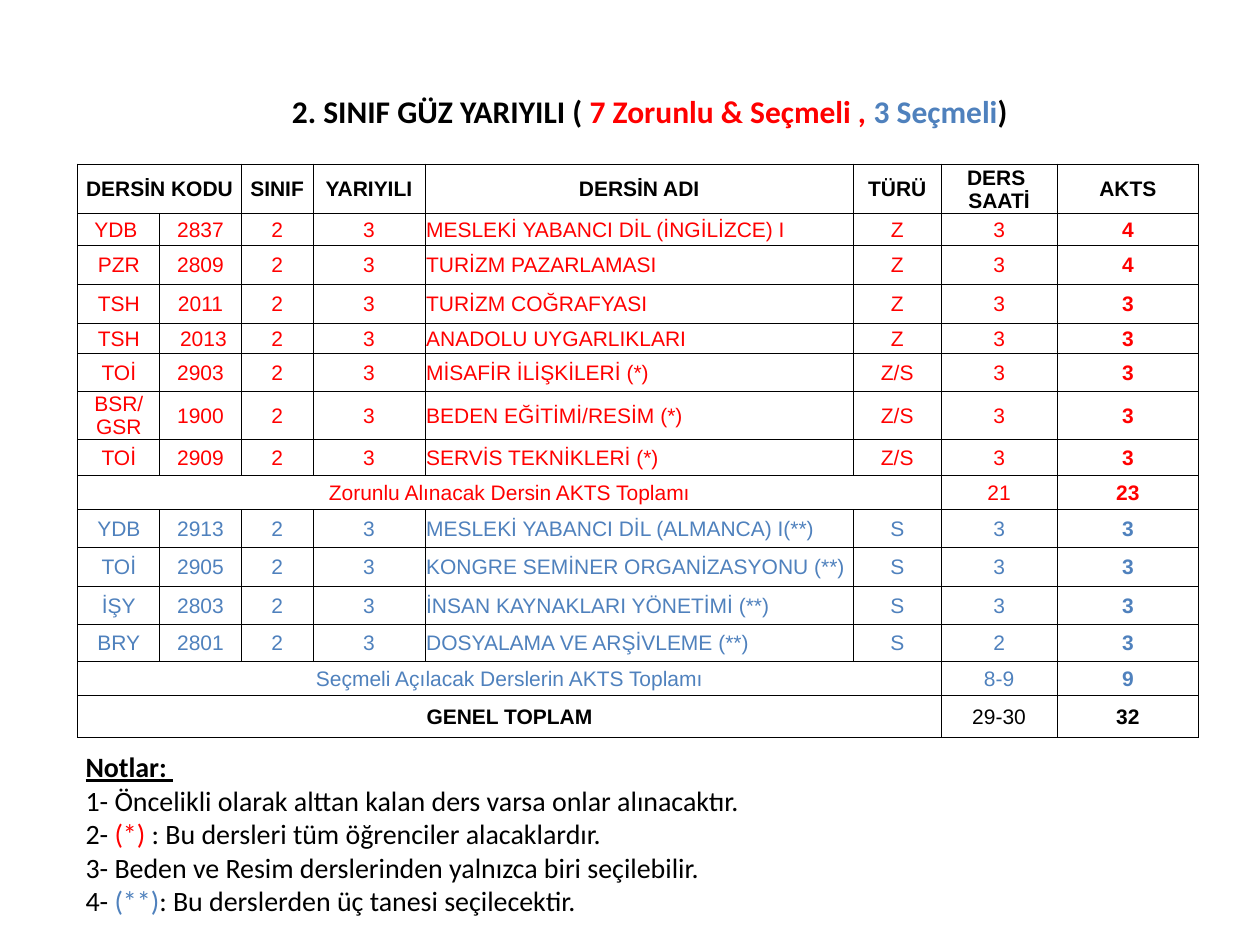
"""Build the slide listing the second-year autumn semester courses."""
import pptx
import pptx.dml.color
import pptx.enum.text
import pptx.oxml
import pptx.oxml.ns
import pptx.util

Pt = pptx.util.Pt
ALIGN = pptx.enum.text.PP_ALIGN
COLORS = {"black": "000000", "red": "FF0000", "blue": "4F81BD"}
COL_WIDTHS = [46.8, 46.6, 41, 64, 244.8, 50.2, 66.2, 81]
ROW_HEIGHTS = [28, 18.4, 22.3, 22.1, 17.2, 21.7, 22.3, 20.7,
               19.4, 21.6, 22.3, 21.7, 21.3, 19.3, 24]
NAME_COL, HOURS_COL, CREDIT_COL = 4, 6, 7
HEADER = ["DERSİN KODU", "", "SINIF", "YARIYILI", "DERSİN ADI", "TÜRÜ", "DERS \nSAATİ", "AKTS"]
REQUIRED = [
    ("YDB ", "2837", "MESLEKİ YABANCI DİL (İNGİLİZCE) I", "Z", "3", "4"),
    ("PZR", "2809", "TURİZM PAZARLAMASI", "Z", "3", "4"),
    ("TSH", "2011", "TURİZM COĞRAFYASI", "Z", "3", "3"),
    ("TSH", " 2013", "ANADOLU UYGARLIKLARI", "Z", "3", "3"),
    ("TOİ", "2903", "MİSAFİR İLİŞKİLERİ (*)", "Z/S", "3", "3"),
    ("BSR/GSR", "1900", "BEDEN EĞİTİMİ/RESİM (*)", "Z/S", "3", "3"),
    ("TOİ", "2909", "SERVİS TEKNİKLERİ (*)", "Z/S", "3", "3"),
]
ELECTIVE = [
    ("YDB", "2913", "MESLEKİ YABANCI DİL (ALMANCA) I(**)", "S", "3", "3"),
    ("TOİ", "2905", "KONGRE SEMİNER ORGANİZASYONU (**)", "S", "3", "3"),
    ("İŞY", "2803", "İNSAN KAYNAKLARI YÖNETİMİ (**)", "S", "3", "3"),
    ("BRY", "2801", "DOSYALAMA VE ARŞİVLEME (**)", "S", "2", "3"),
]
TITLE = [[("2. SINIF GÜZ YARIYILI (", "black"), (" 7 Zorunlu & Seçmeli , ", "red"),
          ("3 Seçmeli", "blue"), (") ", "black")]]
NOTES = [
    [("Notlar: ", "black")],
    [("1- Öncelikli olarak alttan kalan ders varsa onlar alınacaktır.", "black")],
    [("2- ", "black"), ("(*)", "red"), (" : Bu dersleri tüm öğrenciler alacaklardır.", "black")],
    [("3- Beden ve Resim derslerinden yalnızca biri seçilebilir.", "black")],
    [("4- ", "black"), ("(**)", "blue"), (": Bu derslerden üç tanesi seçilecektir.", "black")],
]


def format_run(r, font, size, color, bold=False):
    """Set the font, size, colour and weight of a run."""
    r.font.name = font
    r.font.size = Pt(size)
    r.font.bold = bold
    r.font.color.rgb = pptx.dml.color.RGBColor.from_string(COLORS[color])


def course_row(course):
    """Expand a course to a full table row with its year and semester."""
    prefix, number, name, kind, hours, credit = course
    return [prefix, number, "2", "3", name, kind, hours, credit]


def total_row(label, hours, credit):
    """Make a row whose label spans all columns before the hours."""
    return [label] + [""] * (HOURS_COL - 1) + [hours, credit]


def add_borders(cell, widths):
    """Draw black borders of the given widths around a cell."""
    tc_pr = cell._tc.get_or_add_tcPr()
    for side, width in widths.items():
        tc_pr.append(pptx.oxml.parse_xml(
            f'<a:ln{side} {pptx.oxml.ns.nsdecls("a")} w="{Pt(width)}"><a:solidFill>'
            f'<a:srgbClr val="{COLORS["black"]}"/></a:solidFill></a:ln{side}>'))


def fill_cell(cell, text, color, bold, align):
    """Write formatted text into a transparent cell."""
    cell.margin_left = cell.margin_right = cell.margin_top = Pt(0.7)
    cell.margin_bottom = 0
    cell.vertical_anchor = pptx.enum.text.MSO_ANCHOR.MIDDLE
    cell.fill.background()
    cell.text_frame.text = text
    for p in cell.text_frame.paragraphs:
        p.alignment = align
        p.font.size = Pt(12)
        for r in p.runs:
            format_run(r, "Arial", 12, color, bold)


def add_course_table(s, rows):
    """Add the course table from pairs of colour and cell texts."""
    frame = s.shapes.add_table(len(rows), len(COL_WIDTHS), Pt(44.5), Pt(93.9),
                               Pt(sum(COL_WIDTHS)), Pt(sum(ROW_HEIGHTS)))
    table = frame.table
    table.first_row = table.horz_banding = False
    for column, width in zip(table.columns, COL_WIDTHS):
        column.width = Pt(width)
    for i, (color, texts) in enumerate(rows):
        table.rows[i].height = Pt(ROW_HEIGHTS[i])
        for j, text in enumerate(texts):
            cell = table.cell(i, j)
            bold = i == 0 or j == CREDIT_COL or text == "GENEL TOPLAM"
            align = ALIGN.LEFT if i and j == NAME_COL else ALIGN.CENTER
            add_borders(cell, {"L": 0.5, "R": 1 if j == CREDIT_COL else 0.5,
                               "T": 0.5 if i else 1, "B": 0.5})
            fill_cell(cell, text, color, bold, align)
        if not texts[1]:
            last = HOURS_COL - 1 if i else 1
            table.cell(i, 0).merge(table.cell(i, last))


def add_text(s, box, paragraphs, size, bold=False, align=ALIGN.LEFT):
    """Add a wrapped text box of coloured runs and return its frame."""
    tf = s.shapes.add_textbox(*map(Pt, box)).text_frame
    tf.word_wrap = True
    for i, parts in enumerate(paragraphs):
        p = tf.add_paragraph() if i else tf.paragraphs[0]
        p.alignment = align
        for text, color in parts:
            r = p.add_run()
            r.text = text
            format_run(r, "Calibri", size, color, bold)
    return tf


def main():
    """Create and save the slide."""
    prs = pptx.Presentation()
    prs.slide_width, prs.slide_height = Pt(720), Pt(540)
    s = prs.slides.add_slide(prs.slide_layouts[6])
    rows = [("black", HEADER)]
    rows += [("red", course_row(course)) for course in REQUIRED]
    rows.append(("red", total_row("Zorunlu Alınacak Dersin AKTS Toplamı", "21", "23")))
    rows += [("blue", course_row(course)) for course in ELECTIVE]
    rows.append(("blue", total_row("Seçmeli Açılacak Derslerin AKTS Toplamı", "8-9", "9")))
    rows.append(("black", total_row("GENEL TOPLAM", "29-30", "32")))
    add_course_table(s, rows)
    add_text(s, (133.2, 49, 480.2, 29), TITLE, 18, True, ALIGN.CENTER)
    notes = add_text(s, (41.8, 424.8, 640.8, 104.4), NOTES, 16)
    heading = notes.paragraphs[0].runs[0]
    heading.font.bold = heading.font.underline = True
    prs.save("out.pptx")


if __name__ == "__main__":
    main()
